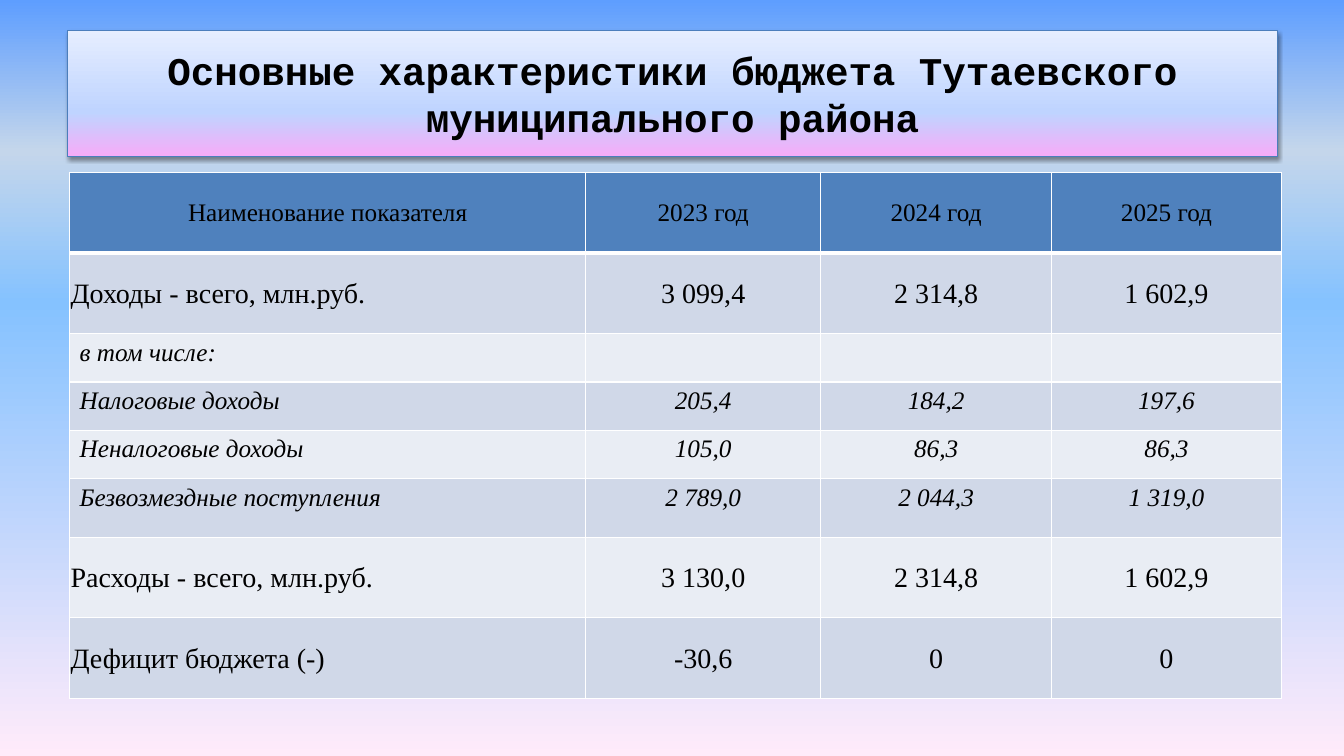
from lxml import etree
from pptx import Presentation
from pptx.dml.color import RGBColor
from pptx.enum.text import MSO_ANCHOR, PP_ALIGN
from pptx.oxml.ns import qn
from pptx.util import Inches, Pt

CENTER, LEFT = PP_ALIGN.CENTER, PP_ALIGN.LEFT
MIDDLE, TOP = MSO_ANCHOR.MIDDLE, MSO_ANCHOR.TOP
TITLE_ONLY = 5
DOWNWARD = 270

TITLE = "Основные характеристики бюджета Тутаевского муниципального района"
COLUMN_WIDTHS = [5.12, 2.33, 2.29, 2.28]
HEADER, TOTAL, DETAIL = "header", "total", "detail"
BUDGET = [
    (HEADER, 0.8, ["Наименование показателя", "2023 год", "2024 год", "2025 год"]),
    (TOTAL, 0.8, ["Доходы - всего, млн.руб.", "3 099,4", "2 314,8", "1 602,9"]),
    (DETAIL, 0.48, ["в том числе:", "", "", ""]),
    (DETAIL, 0.48, ["Налоговые доходы", "205,4", "184,2", "197,6"]),
    (DETAIL, 0.48, ["Неналоговые доходы", "105,0", "86,3", "86,3"]),
    (DETAIL, 0.58, ["Безвозмездные поступления", "2 789,0", "2 044,3", "1 319,0"]),
    (TOTAL, 0.8, ["Расходы - всего, млн.руб.", "3 130,0", "2 314,8", "1 602,9"]),
    (TOTAL, 0.8, ["Дефицит бюджета (-)", "-30,6", "0", "0"]),
]


def color(value):
    return RGBColor.from_string(value)


def add_color(parent, value):
    return etree.SubElement(parent, qn("a:srgbClr"), val=value)


def fill_gradient(fill, element, stops):
    fill.gradient()
    fill.gradient_angle = DOWNWARD
    stop_list = element.find(".//" + qn("a:gsLst"))
    for stop in list(stop_list):
        stop_list.remove(stop)
    for position, value in stops:
        stop = etree.SubElement(stop_list, qn("a:gs"), pos=str(position * 1000))
        add_color(stop, value)


def write_text(frame, text, font="Times New Roman", size=18, bold=False,
               italic=False, align=CENTER):
    paragraph = frame.paragraphs[0]
    paragraph.alignment = align
    target = paragraph
    if text:
        target = paragraph.add_run()
        target.text = text
    target.font.name = font
    target.font.size = Pt(size)
    target.font.bold = bold
    target.font.italic = italic
    target.font.color.rgb = color("000000")


def add_shadow(shape):
    shape.shadow.inherit = False
    effects = shape.element.spPr.find(qn("a:effectLst"))
    shadow = etree.SubElement(
        effects, qn("a:outerShdw"), blurRad=str(Pt(3.1)), dist=str(Pt(1.6)),
        dir="5400000", rotWithShape="0")
    etree.SubElement(add_color(shadow, "000000"), qn("a:alpha"), val="38000")


def format_title(slide, left, top, width, height):
    title = slide.shapes.title
    title.left, title.top = Inches(left), Inches(top)
    title.width, title.height = Inches(width), Inches(height)
    fill_gradient(title.fill, title.element,
                  [(0, "E6EEFF"), (65, "BFD4FF"), (100, "F6ACF8")])
    title.line.color.rgb = color("4B7EBC")
    title.line.width = Pt(0.75)
    add_shadow(title)
    title.text_frame.word_wrap = True
    title.text_frame.vertical_anchor = MIDDLE
    write_text(title.text_frame, TITLE, font="Courier New", size=28, bold=True)


def set_borders(cell, top_width, bottom_width):
    properties = cell._tc.get_or_add_tcPr()
    widths = {"a:lnL": 1, "a:lnR": 1, "a:lnT": top_width, "a:lnB": bottom_width}
    for index, (side, width) in enumerate(widths.items()):
        border = etree.Element(qn(side), w=str(Pt(width)))
        add_color(etree.SubElement(border, qn("a:solidFill")), "FFFFFF")
        properties.insert(index, border)


def format_cell(cell, text, kind, row, column):
    detail = kind == DETAIL
    insets = (0.1, 0.05, 0.1, 0.05) if detail else (0.01, 0.01, 0.01, 0)
    (cell.margin_left, cell.margin_top,
     cell.margin_right, cell.margin_bottom) = map(Inches, insets)
    cell.vertical_anchor = TOP if detail else MIDDLE
    band = "D0D8E8" if row % 2 else "E9EDF4"
    cell.fill.solid()
    cell.fill.fore_color.rgb = color("4F81BD" if kind == HEADER else band)
    set_borders(cell, 3 if row == 1 else 1, 3 if kind == HEADER else 1)
    write_text(cell.text_frame, text, size=20 if kind == TOTAL else 18, italic=detail,
               align=LEFT if column == 0 and kind != HEADER else CENTER)


def add_budget_table(slide, left, top):
    width = sum(COLUMN_WIDTHS)
    height = sum(row_height for _, row_height, _ in BUDGET)
    table = slide.shapes.add_table(
        len(BUDGET), len(COLUMN_WIDTHS), Inches(left), Inches(top),
        Inches(width), Inches(height)).table
    for column, column_width in zip(table.columns, COLUMN_WIDTHS):
        column.width = Inches(column_width)
    for row, (kind, row_height, texts) in enumerate(BUDGET):
        table.rows[row].height = Inches(row_height)
        for column, text in enumerate(texts):
            format_cell(table.cell(row, column), text, kind, row, column)


def main():
    presentation = Presentation()
    presentation.slide_width = Inches(13.33)
    presentation.slide_height = Inches(7.5)
    slide = presentation.slides.add_slide(presentation.slide_layouts[TITLE_ONLY])
    fill_gradient(slide.background.fill, slide.element,
                  [(0, "5E9EFF"), (20, "C4D6EB"), (40, "85C2FF"), (100, "FFEBFA")])
    format_title(slide, 0.67, 0.3, 12, 1.25)
    add_budget_table(slide, 0.69, 1.71)
    presentation.save("out.pptx")


if __name__ == "__main__":
    main()
